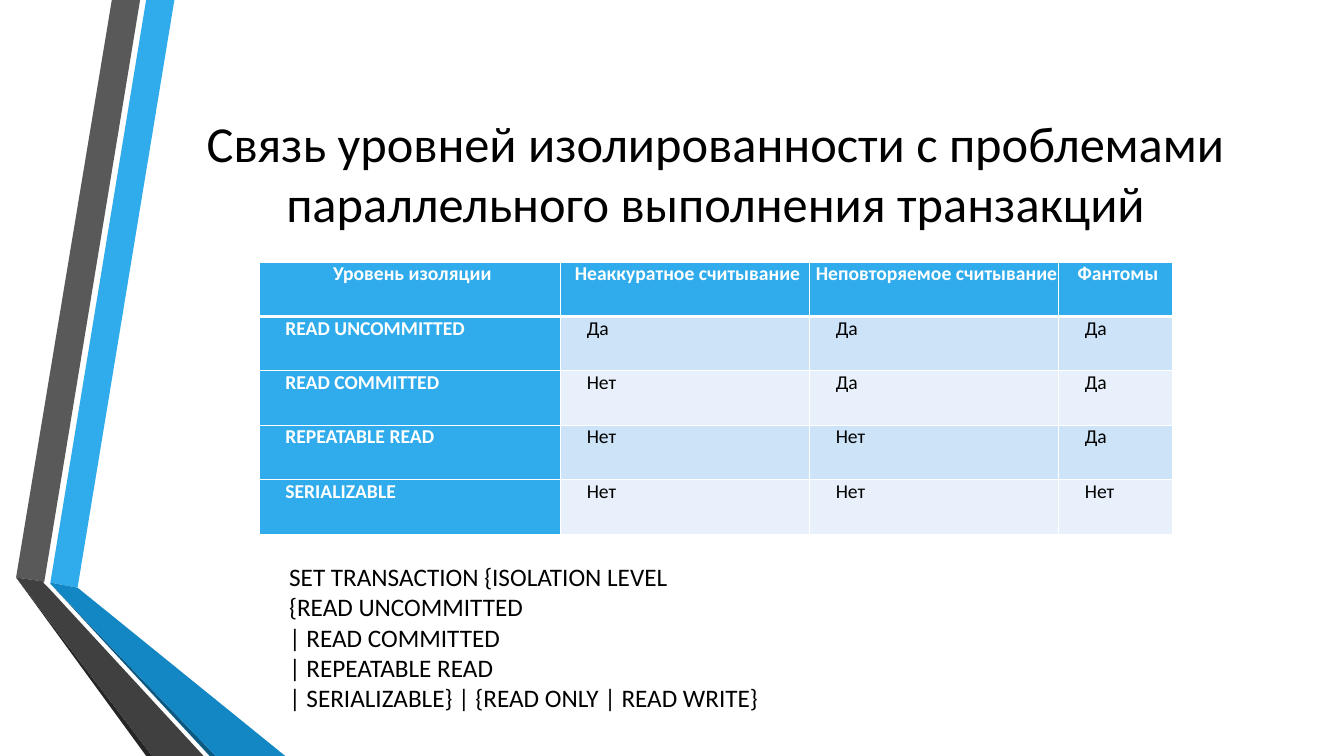
"""Build a slide on isolation levels and the problems of parallel transactions."""
from dataclasses import dataclass

import pptx
import pptx.dml.color
import pptx.enum.text
import pptx.oxml
import pptx.oxml.ns
import pptx.util

PX = 9144


@dataclass(frozen=True)
class Theme:
    font: str = "Calibri"
    head: int = 36
    body: int = 18
    cell: int = 14
    ink: str = "000000"
    white: str = "FFFFFF"
    blue: str = "30ACEC"
    bands: tuple = ("CDE3F8", "E8F1FB")


THEME = Theme()
ALIGN = pptx.enum.text.PP_ALIGN
ANCHOR = pptx.enum.text.MSO_ANCHOR
FIT = pptx.enum.text.MSO_AUTO_SIZE

RIBBONS = [
    ("30ACEC", [(50, 578), (77, 583), (173, 0), (145, 0)]),
    ("595959", [(139, 0), (111, 0), (16, 573), (44, 577)]),
    ("262626", [(16, 573), (145, 750), (151, 750)]),
    ("0C5A82", [(50, 579), (208, 750), (214, 750)]),
    ("1287C3", [(50, 579), (214, 750), (283, 750), (77, 583), (50, 578)]),
    ("404040", [(202, 750), (48, 583), (43, 578), (44, 577), (16, 573), (151, 750)]),
]
TITLE = "Связь уровней изолированности с проблемами параллельного выполнения транзакций"
COLS = [299, 247, 247, 113]
ROWS = [
    ["Уровень изоляции", "Неаккуратное считывание", "Неповторяемое считывание", "Фантомы"],
    ["READ UNCOMMITTED", "Да", "Да", "Да"],
    ["READ COMMITTED", "Нет", "Да", "Да"],
    ["REPEATABLE READ", "Нет", "Нет", "Да"],
    ["SERIALIZABLE", "Нет", "Нет", "Нет"],
]
SYNTAX = [
    "SET TRANSACTION {ISOLATION LEVEL",
    "{READ UNCOMMITTED",
    "| READ COMMITTED",
    "| REPEATABLE READ",
    "| SERIALIZABLE} | {READ ONLY | READ WRITE}",
]


def px(*nums):
    return [num * PX for num in nums]


def paint(fill, tint):
    fill.solid()
    fill.fore_color.rgb = pptx.dml.color.RGBColor.from_string(tint)


def style(para, size, tint, bold=False):
    for run in para.runs:
        run.font.name = THEME.font
        run.font.size = pptx.util.Pt(size)
        run.font.bold = bold
        run.font.color.rgb = pptx.dml.color.RGBColor.from_string(tint)


def add_ribbon(slide, tint, points):
    pen = slide.shapes.build_freeform(*points[0], scale=PX)
    pen.add_line_segments(points[1:], close=True)
    shape = pen.convert_to_shape()
    shape.shadow.inherit = False
    shape.line.fill.background()
    paint(shape.fill, tint)


def add_text(slide, box, lines, size, align, anchor, fit):
    frame = slide.shapes.add_textbox(*px(*box)).text_frame
    frame.word_wrap = True
    frame.auto_size = fit
    frame.vertical_anchor = anchor
    frame.text = "\n".join(lines)
    for para in frame.paragraphs:
        para.alignment = align
        style(para, size, THEME.ink)


def add_edges(cell, widths):
    props = cell._tc.get_or_add_tcPr()
    for side, width in widths.items():
        props.append(pptx.oxml.parse_xml(
            f'<a:ln{side} {pptx.oxml.ns.nsdecls("a")} w="{pptx.util.Pt(width)}">'
            f'<a:solidFill><a:srgbClr val="{THEME.white}"/></a:solidFill></a:ln{side}>'))


def fill_cell(cell, text, row, col):
    top = row == 0
    key = top or col == 0
    cell.margin_left = cell.margin_right = cell.margin_top = cell.margin_bottom = 0
    add_edges(cell, {"L": 1, "R": 1, "T": 3 if row == 1 else 1, "B": 3 if top else 1})
    paint(cell.fill, THEME.blue if key else THEME.bands[(row - 1) % 2])
    cell.text_frame.text = text
    para = cell.text_frame.paragraphs[0]
    para.alignment = ALIGN.CENTER if top else ALIGN.JUSTIFY
    para.space_before = pptx.util.Pt(3)
    para.space_after = pptx.util.Pt(8.2)
    left, indent = px(5, 0 if top else 21)
    props = para._p.get_or_add_pPr()
    props.set("marL", str(left))
    props.set("indent", str(indent))
    style(para, THEME.cell, THEME.white if key else THEME.ink, key)


def add_grid(slide, left, top, high):
    box = px(left, top, sum(COLS), high * len(ROWS))
    table = slide.shapes.add_table(len(ROWS), len(COLS), *box).table
    table.first_row = table.horz_banding = False
    for col, width in zip(table.columns, px(*COLS)):
        col.width = width
    for row, texts in enumerate(ROWS):
        for col, text in enumerate(texts):
            fill_cell(table.cell(row, col), text, row, col)


def main():
    deck = pptx.Presentation()
    deck.slide_width, deck.slide_height = px(1333, 750)
    slide = deck.slides.add_slide(deck.slide_layouts[6])
    for tint, points in RIBBONS:
        add_ribbon(slide, tint, points)
    add_text(slide, (162, 75, 1096, 192), [TITLE], THEME.head,
             ALIGN.CENTER, ANCHOR.MIDDLE, FIT.NONE)
    add_grid(slide, 257, 260, 54)
    add_text(slide, (277, 552, 866, 162), SYNTAX, THEME.body,
             ALIGN.LEFT, ANCHOR.TOP, FIT.SHAPE_TO_FIT_TEXT)
    deck.save("out.pptx")


if __name__ == "__main__":
    main()
